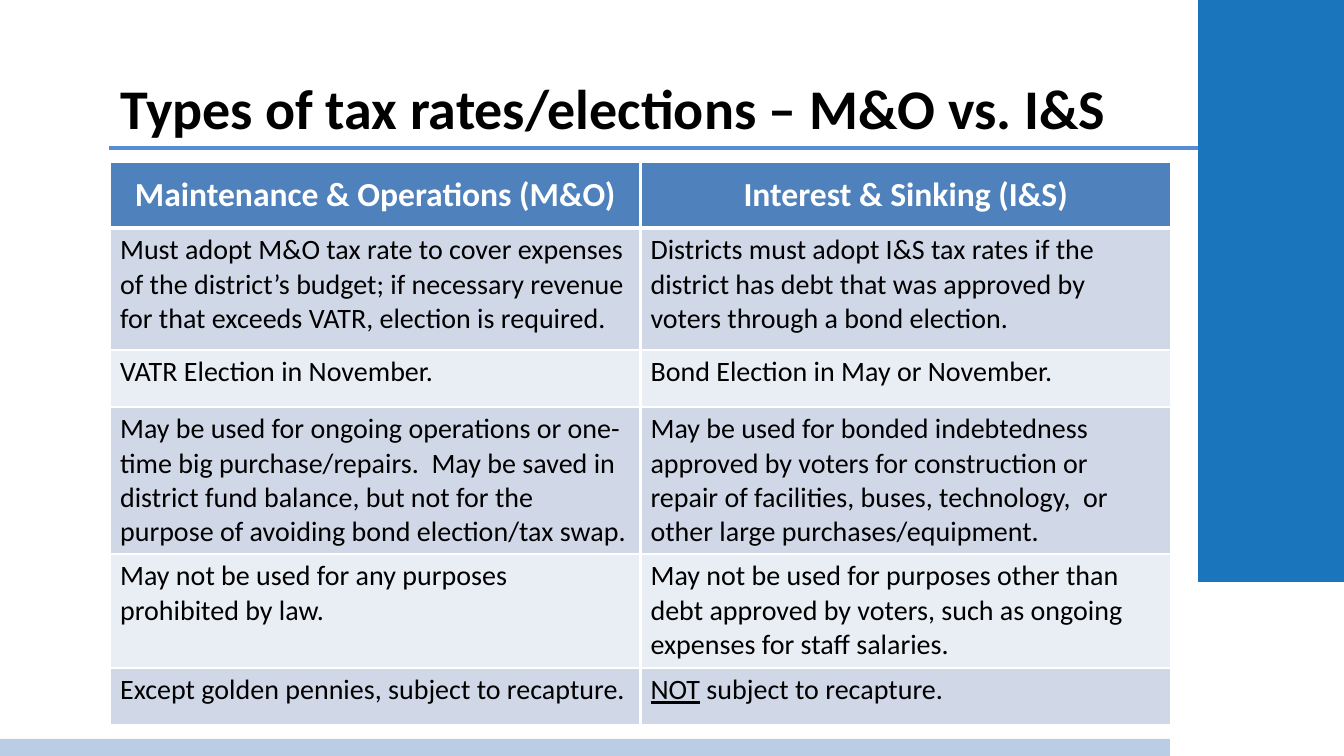
from lxml.etree import SubElement
from pptx import Presentation
from pptx.dml.color import RGBColor
from pptx.enum.shapes import MSO_CONNECTOR as Connector, MSO_SHAPE as Shape
from pptx.enum.text import MSO_ANCHOR as Anchor, MSO_AUTO_SIZE as AutoSize, PP_ALIGN as Align
from pptx.oxml.ns import qn
from pptx.util import Emu, Pt

BLACK = RGBColor(0x00, 0x00, 0x00)
WHITE = RGBColor(0xFF, 0xFF, 0xFF)
SIDE_BLUE = RGBColor(0x1B, 0x75, 0xBC)
FOOT_BLUE = RGBColor(0xB9, 0xCD, 0xE5)
RULE_BLUE = RGBColor(0x55, 0x8E, 0xD5)
HEAD_BLUE = RGBColor(0x4F, 0x81, 0xBD)
BAND_DARK = RGBColor(0xD0, 0xD8, 0xE8)
BAND_LIGHT = RGBColor(0xE9, 0xED, 0xF4)

HEADINGS = ("Maintenance & Operations (M&O)", "Interest & Sinking (I&S)")
COMPARISON = [
    ("Must adopt M&O tax rate to cover expenses of the district’s budget; "
     "if necessary revenue for that exceeds VATR, election is required.",
     "Districts must adopt I&S tax rates if the district has debt that was "
     "approved by voters through a bond election."),
    ("VATR Election in November.", "Bond Election in May or November."),
    ("May be used for ongoing operations or one-time big purchase/repairs.  "
     "May be saved in district fund balance, but not for the purpose of "
     "avoiding bond election/tax swap.",
     "May be used for bonded indebtedness approved by voters for construction "
     "or repair of facilities, buses, technology,  or other large "
     "purchases/equipment."),
    ("May not be used for any purposes prohibited by law.",
     "May not be used for purposes other than debt approved by voters, such "
     "as ongoing expenses for staff salaries."),
    ("Except golden pennies, subject to recapture.",
     "NOT subject to recapture."),
]
UNDERLINED = "NOT"
ROW_HEIGHTS = (66, 122, 57, 146, 114, 56)


def px(length):
    return Emu(round(length * 914400 / 100.8))


class SlideBuilder:
    font_name = "Calibri"

    def __init__(self, deck):
        self.page = deck.slides.add_slide(deck.slide_layouts[5])

    def style(self, para, size, color, bold=False, align=Align.LEFT):
        para.alignment = align
        font = para.font
        font.name, font.size, font.bold = self.font_name, Pt(size), bold
        font.color.rgb = color

    def title(self, text, left, top, width, height):
        box = self.page.shapes.title
        box.left, box.top, box.width, box.height = map(px, (left, top, width, height))
        frame = box.text_frame
        frame.text = text
        frame.word_wrap = True
        frame.auto_size = AutoSize.NONE
        frame.vertical_anchor = Anchor.MIDDLE
        self.style(frame.paragraphs[0], 40, BLACK, bold=True)

    def bar(self, color, left, top, width, height):
        bar = self.page.shapes.add_shape(
            Shape.RECTANGLE, *map(px, (left, top, width, height)))
        bar.shadow.inherit = False
        bar.fill.solid()
        bar.fill.fore_color.rgb = color
        bar.line.fill.background()

    def rule(self, color, weight, x1, y1, x2, y2):
        rule = self.page.shapes.add_connector(
            Connector.STRAIGHT, *map(px, (x1, y1, x2, y2)))
        rule.line.color.rgb = color
        rule.line.width = Pt(weight)
        SubElement(rule.element.spPr, qn("a:effectLst"))

    def borders(self, cell, **weights):
        properties = cell._tc.get_or_add_tcPr()
        for side in "LRTB":
            line = SubElement(properties, qn(f"a:ln{side}"), w=str(Pt(weights[side])))
            fill = SubElement(line, qn("a:solidFill"))
            SubElement(fill, qn("a:srgbClr"), val=str(WHITE))

    def table(self, rows, left, top, width, heights):
        table = self.page.shapes.add_table(
            len(rows), len(rows[0]),
            *map(px, (left, top, width, sum(heights)))).table
        for row, height in zip(table.rows, heights):
            row.height = px(height)
        last_row, last_col = len(rows) - 1, len(rows[0]) - 1
        row_lines = [1, 3] + [1.5] * (last_row - 1) + [1]
        for r, texts in enumerate(rows):
            for c, text in enumerate(texts):
                cell = table.cell(r, c)
                self.borders(cell, L=3 if c > 0 else 1, R=3 if c < last_col else 1,
                             T=row_lines[r], B=row_lines[r + 1])
                self.fill_cell(cell, text, r)

    def fill_cell(self, cell, text, row):
        cell.fill.solid()
        para = cell.text_frame.paragraphs[0]
        if text.startswith(UNDERLINED):
            span = para.add_run()
            span.text = UNDERLINED
            span.font.underline = True
            text = text.removeprefix(UNDERLINED)
        para.add_run().text = text
        if row == 0:
            cell.fill.fore_color.rgb = HEAD_BLUE
            cell.vertical_anchor = Anchor.MIDDLE
            self.style(para, 24, WHITE, bold=True, align=Align.CENTER)
        else:
            cell.fill.fore_color.rgb = BAND_DARK if row % 2 else BAND_LIGHT
            self.style(para, 20, BLACK)


def main():
    deck = Presentation()
    deck.slide_width, deck.slide_height = px(1344), px(756)
    slide = SlideBuilder(deck)

    # Side panel, footer band and title rule
    slide.bar(SIDE_BLUE, 1198, 0, 146, 582)
    slide.bar(FOOT_BLUE, 0, 739, 1170, 20)
    slide.rule(RULE_BLUE, 2.25, 1198, 148, 109, 148)

    # Title
    slide.title("Types of tax rates/elections – M&O vs. I&S", 110, 65, 1042, 84)

    # Comparison table
    slide.table([HEADINGS, *COMPARISON], 110, 162, 1061, ROW_HEIGHTS)

    deck.save("out.pptx")


if __name__ == "__main__":
    main()
